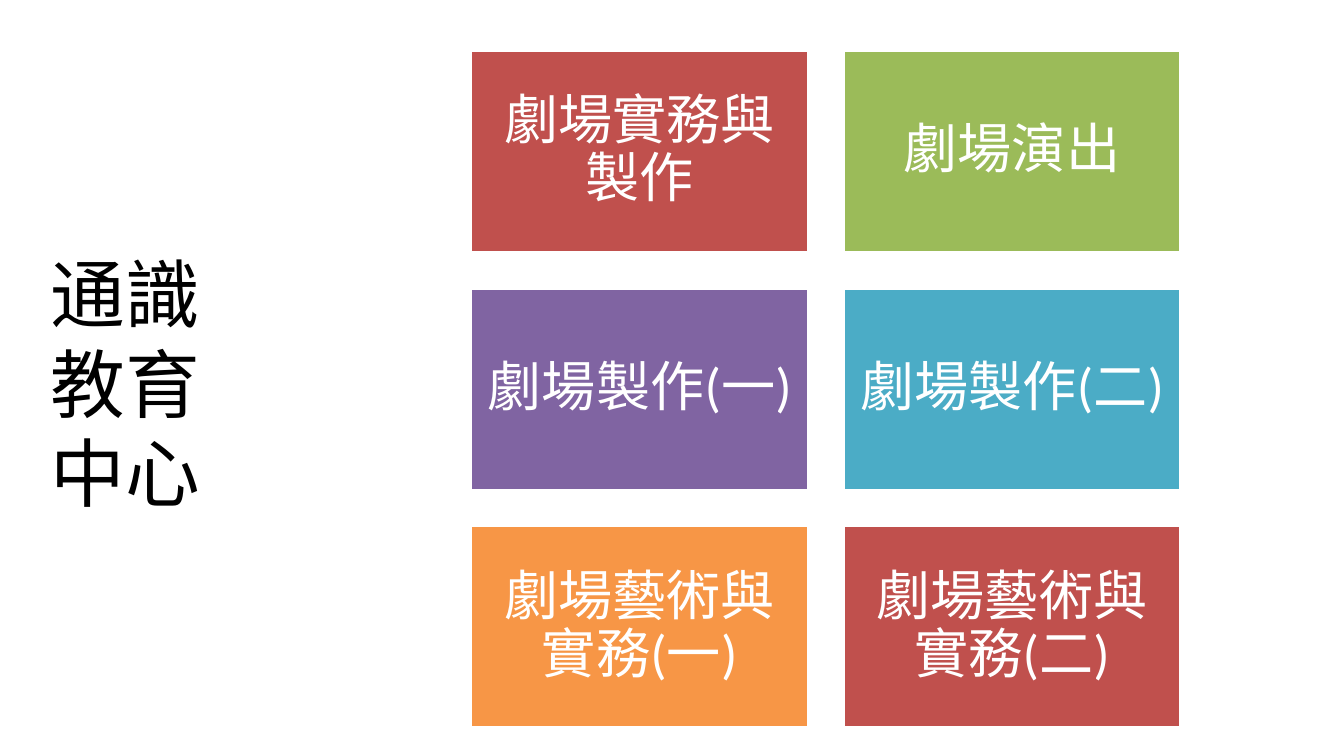
from pptx import Presentation
from pptx.dml.color import RGBColor
from pptx.enum.shapes import MSO_SHAPE
from pptx.enum.text import MSO_ANCHOR, PP_ALIGN
from pptx.util import Inches, Pt

TITLE = "通識教育中心"
COURSES = [
    ("劇場實務與製作", "red"),
    ("劇場演出", "green"),
    ("劇場製作(一)", "purple"),
    ("劇場製作(二)", "blue"),
    ("劇場藝術與實務(一)", "orange"),
    ("劇場藝術與實務(二)", "red"),
]

THEME = {
    "red": "C0504D", "green": "9BBB59", "purple": "8064A2",
    "blue": "4BACC6", "orange": "F79646",
    "white": "FFFFFF", "black": "000000",
    "title": {"name": "TeX Gyre Bonum", "size": Pt(40)},
    "course": {"name": "Calibri", "size": Pt(29)},
}

SLIDE_W = 10
SLIDE_H = SLIDE_W * 9 / 16
TOP = 0.37
TITLE_BOX = (0.28, TOP, 1.34, 4.95)
GRID_LEFT, COLUMNS = 3.5, 2
CARD_W, CARD_H = 2.52, 1.51
COL_GAP, ROW_GAP = 0.25, 0.26


def color(name):
    return RGBColor.from_string(THEME[name])


def write(s, text, font, ink, align, margins, spacing):
    tf = s.text_frame
    frame = {"word_wrap": True, "vertical_anchor": MSO_ANCHOR.MIDDLE, **margins}
    for key, value in frame.items():
        setattr(tf, key, value)
    p = tf.paragraphs[0]
    p.alignment, p.line_spacing = align, spacing
    r = p.add_run()
    r.text = text
    for key, value in THEME[font].items():
        setattr(r.font, key, value)
    r.font.color.rgb = color(ink)


prs = Presentation()
prs.slide_width, prs.slide_height = Inches(SLIDE_W), Inches(SLIDE_H)
slide = prs.slides.add_slide(prs.slide_layouts[6])

title = slide.shapes.add_textbox(*map(Inches, TITLE_BOX))
write(title, TITLE, "title", "black", PP_ALIGN.LEFT, {}, 1.0)

card_margins = {f"margin_{side}": Inches(0.12)
                for side in ("left", "top", "right", "bottom")}
for i, (course, fill) in enumerate(COURSES):
    row, col = divmod(i, COLUMNS)
    box = (GRID_LEFT + col * (CARD_W + COL_GAP), TOP + row * (CARD_H + ROW_GAP),
           CARD_W, CARD_H)
    card = slide.shapes.add_shape(MSO_SHAPE.RECTANGLE, *map(Inches, box))
    card.shadow.inherit = False
    card.fill.solid()
    card.fill.fore_color.rgb = color(fill)
    card.line.color.rgb = color("white")
    card.line.width = Pt(2)
    write(card, course, "course", "white", PP_ALIGN.CENTER, card_margins, 0.9)

prs.save("out.pptx")
